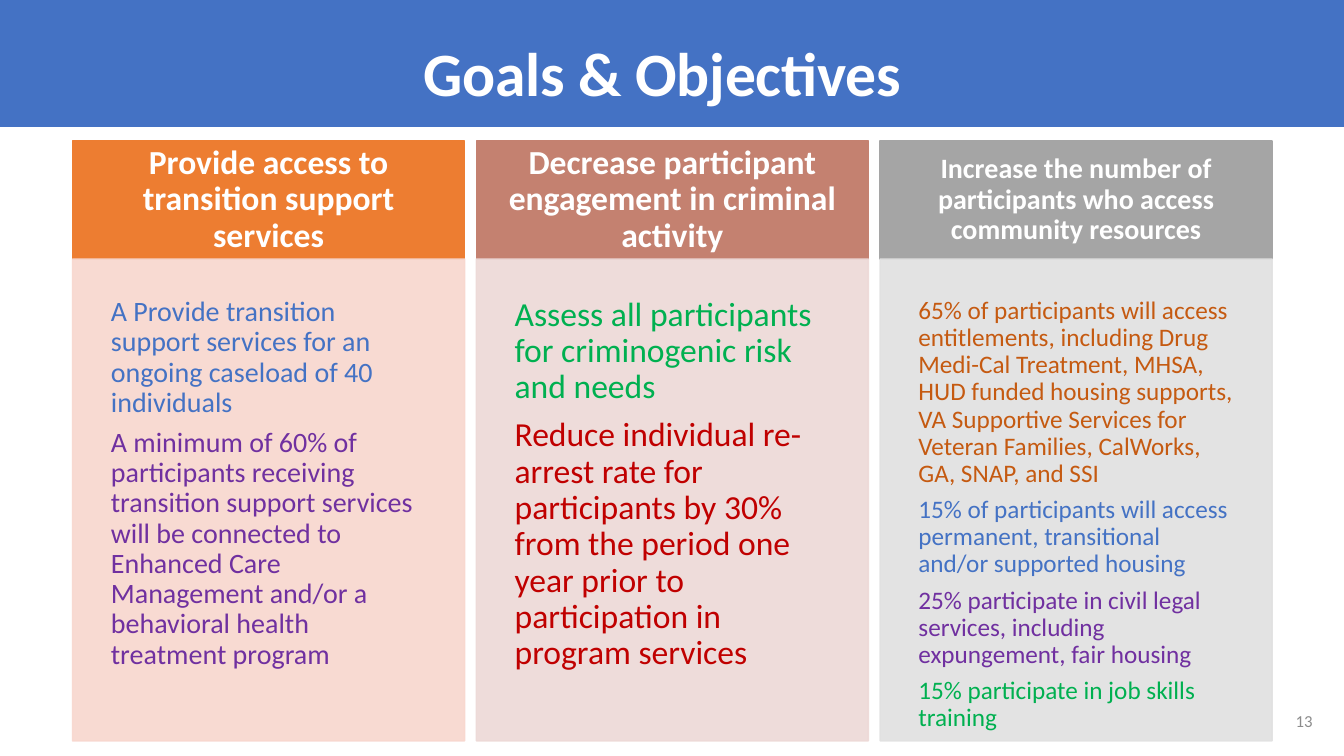
from lxml import etree
from pptx import Presentation
from pptx.dml.color import RGBColor
from pptx.enum import shapes, text
from pptx.oxml.ns import qn
from pptx.util import Pt

FONT = "Calibri"
WHITE, BLUE, PURPLE, GREEN = "FFFFFF", "4472C4", "7030A0", "00B050"
CENTER, LEFT, RIGHT = text.PP_ALIGN.CENTER, text.PP_ALIGN.LEFT, text.PP_ALIGN.RIGHT

# Heading, heading size, heading fill, body fill, body size, objectives
GOALS = [
    ("Provide access to transition support services", 24, "ED7D31", "F8D7CE", 20, [
        ("A Provide transition support services for an ongoing caseload of 40 individuals", BLUE),
        ("A minimum of 60% of participants receiving transition support services will be "
         "connected to Enhanced Care Management and/or a behavioral health treatment program",
         PURPLE),
    ]),
    ("Decrease participant engagement in criminal activity", 24, "C48170", "EDD9D7", 24, [
        ("Assess all participants for criminogenic risk and needs", GREEN),
        ("Reduce individual re-arrest rate for participants by 30% from the period one year "
         "prior to participation in program services", "C00000"),
    ]),
    ("Increase the number of participants who access community resources",
     20, "A5A5A5", "E1E1E1", 18, [
        ("65% of participants will access entitlements, including Drug Medi-Cal Treatment, "
         "MHSA, HUD funded housing supports, VA Supportive Services for Veteran Families, "
         "CalWorks, GA, SNAP, and SSI", "C55A11"),
        ("15% of participants will access permanent, transitional and/or supported housing",
         BLUE),
        ("25% participate in civil legal services, including expungement, fair housing", PURPLE),
        ("15% participate in job skills training", GREEN),
    ]),
]


def rgb(value):
    return RGBColor.from_string(value)


def set_alpha(fill_parent, percent):
    for color in fill_parent.iter(qn("a:srgbClr")):
        etree.SubElement(color, qn("a:alpha")).set("val", str(percent * 1000))


def add_box(s, x, y, w, h, color, outlined=True, alpha=100):
    sp = s.shapes.add_shape(shapes.MSO_SHAPE.RECTANGLE, Pt(x), Pt(y), Pt(w), Pt(h))
    sp.shadow.inherit = False
    sp.fill.solid()
    sp.fill.fore_color.rgb = rgb(color)
    if outlined:
        sp.line.color.rgb = rgb(color)
        sp.line.width = Pt(1)
    else:
        sp.line.fill.background()
    if alpha < 100:
        set_alpha(sp.element.spPr, alpha)
    return sp


def add_label(s, x, y, w, h):
    return s.shapes.add_textbox(Pt(x), Pt(y), Pt(w), Pt(h))


def write(sp, paragraphs, size, align, anchor, inset, bold=False, spacing=None, after=0):
    """Fill a shape with (wording, colour) paragraphs; inset is (sides, top and bottom)."""
    tf = sp.text_frame
    tf.word_wrap = True
    tf.vertical_anchor = anchor
    tf.margin_left = tf.margin_right = Pt(inset[0])
    tf.margin_top = tf.margin_bottom = Pt(inset[1])
    for i, (wording, color) in enumerate(paragraphs):
        p = tf.paragraphs[0] if i == 0 else tf.add_paragraph()
        p.alignment = align
        p.space_after = Pt(after)
        if spacing:
            p.line_spacing = spacing
        r = p.add_run()
        r.text = wording
        r.font.name = FONT
        r.font.size = Pt(size)
        r.font.bold = bold
        r.font.color.rgb = rgb(color)


def add_banner(s, x, y, w, h):
    add_box(s, x, y, w, h, BLUE, outlined=False)
    title = add_label(s, x + 78.5, y + 15.1, 789.1, 72)
    write(title, [("Goals & Objectives", WHITE)], 44, CENTER,
          text.MSO_ANCHOR.MIDDLE, (7.2, 3.6), bold=True)
    title.text_frame.paragraphs[0].runs[0].font._element.set("spc", "-20")


def add_goal(s, x, y, w, h, goal):
    heading, head_size, head_color, body_color, body_size, objectives = goal
    head_h = 84.2
    head = add_box(s, x, y, w, head_h, head_color)
    write(head, [(heading, WHITE)], head_size, CENTER, text.MSO_ANCHOR.MIDDLE,
          (22.3, 0), bold=True, spacing=0.9)
    body = add_box(s, x, y + head_h, w, h - head_h, body_color, alpha=90)
    write(body, objectives, body_size, LEFT, text.MSO_ANCHOR.TOP,
          (27.4, 27.4), spacing=0.9, after=0.35 * body_size)


def add_page_number(s, x, y, w, h):
    write(add_label(s, x, y, w, h), [("13", "8C8C8C")], 12, RIGHT,
          text.MSO_ANCHOR.MIDDLE, (7.2, 3.6))


def main():
    prs = Presentation()
    prs.slide_width, prs.slide_height = Pt(960), Pt(540)
    s = prs.slides.add_slide(prs.slide_layouts[6])

    add_banner(s, 0, 0, 960, 90.7)

    # Three equal columns, one per goal
    left, width, gap = 51.8, 280.1, 8.3
    for i, goal in enumerate(GOALS):
        add_goal(s, left + i * (width + gap), 100.8, width, 428.4, goal)

    add_page_number(s, 895, 500.5, 49.7, 28.8)
    prs.save("out.pptx")


if __name__ == "__main__":
    main()
